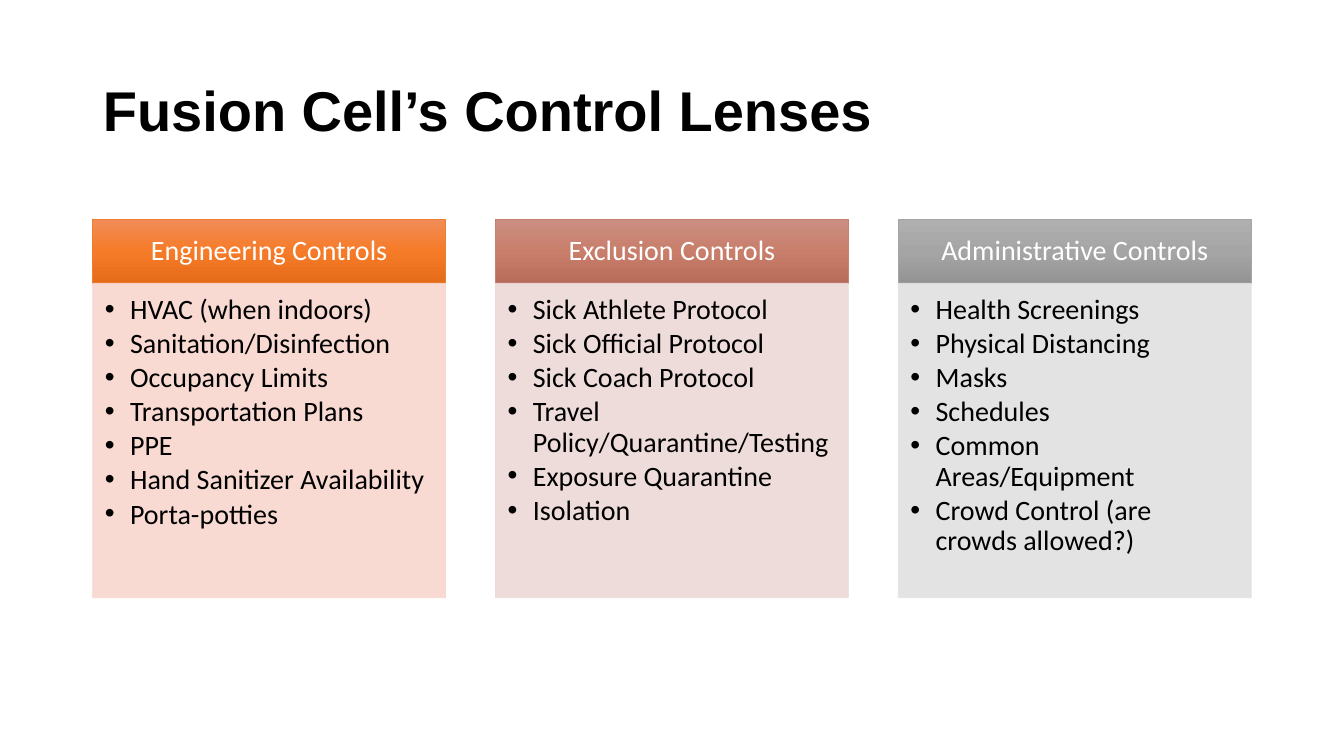
from copy import deepcopy

from lxml import etree
from pptx import Presentation
from pptx import util as u
from pptx.dml.color import RGBColor
from pptx.enum import shapes, text
from pptx.oxml.ns import qn

BLACK = RGBColor(0x00, 0x00, 0x00)
WHITE = RGBColor(0xFF, 0xFF, 0xFF)

# Heading, gradient colours, heading outline, body colour, bullet items
CONTROLS = [
    ("Engineering Controls",
     [RGBColor(0xF1, 0x8C, 0x57), RGBColor(0xF6, 0x7B, 0x28), RGBColor(0xE5, 0x6C, 0x19)],
     RGBColor(0xED, 0x7D, 0x31), RGBColor(0xF8, 0xD7, 0xCE),
     ["HVAC (when indoors)", "Sanitation/Disinfection", "Occupancy Limits",
      "Transportation Plans", "PPE", "Hand Sanitizer Availability", "Porta-potties"]),
    ("Exclusion Controls",
     [RGBColor(0xCB, 0x8F, 0x81), RGBColor(0xC9, 0x7E, 0x6B), RGBColor(0xB7, 0x6D, 0x5B)],
     RGBColor(0xC4, 0x81, 0x70), RGBColor(0xED, 0xD9, 0xD7),
     ["Sick Athlete Protocol", "Sick Official Protocol", "Sick Coach Protocol",
      "Travel Policy/Quarantine/Testing", "Exposure Quarantine", "Isolation"]),
    ("Administrative Controls",
     [RGBColor(0xAF, 0xAF, 0xAF), RGBColor(0xA5, 0xA5, 0xA5), RGBColor(0x93, 0x93, 0x93)],
     RGBColor(0xA5, 0xA5, 0xA5), RGBColor(0xE1, 0xE1, 0xE1),
     ["Health Screenings", "Physical Distancing", "Masks", "Schedules",
      "Common Areas/Equipment", "Crowd Control (are crowds allowed?)"]),
]

LEFT, TOP, TOTAL_WIDTH = 0.92, 2.18, 11.49
COLUMN_WIDTH, HEADING_HEIGHT, BODY_HEIGHT = 3.5, 0.63, 3.12
COLUMN_STEP = (TOTAL_WIDTH - COLUMN_WIDTH) / (len(CONTROLS) - 1)


def write(shape, lines, size=20, font="Calibri", color=BLACK, bold=False,
          align=text.PP_ALIGN.LEFT, anchor=text.MSO_ANCHOR.MIDDLE,
          insets=(0.1, 0.05, 0.1, 0.05), bullet=False):
    frame = shape.text_frame
    frame.word_wrap = True
    frame.auto_size = text.MSO_AUTO_SIZE.NONE
    frame.vertical_anchor = anchor
    (frame.margin_left, frame.margin_top,
     frame.margin_right, frame.margin_bottom) = map(u.Inches, insets)
    frame.text = "\n".join(lines)
    for paragraph in frame.paragraphs:
        paragraph.alignment = align
        paragraph.line_spacing = 0.9
        if bullet:
            paragraph.space_after = u.Pt(2.75)
            properties = paragraph._p.get_or_add_pPr()
            properties.set("marL", str(u.Inches(0.25)))
            properties.set("indent", str(-u.Inches(0.25)))
            etree.SubElement(properties, qn("a:buFont")).set("typeface", "Arial")
            etree.SubElement(properties, qn("a:buChar")).set("char", "•")
        paragraph.font.size = u.Pt(size)
        paragraph.font.name = font
        paragraph.font.bold = bold
        paragraph.font.color.rgb = color


def add_box(slide, left, top, height, outline):
    box = slide.shapes.add_shape(
        shapes.MSO_SHAPE.RECTANGLE, u.Inches(left), u.Inches(top),
        u.Inches(COLUMN_WIDTH), u.Inches(height))
    box.shadow.inherit = False
    box.line.color.rgb = outline
    box.line.width = u.Pt(0.5)
    return box


presentation = Presentation()
presentation.slide_width = u.Inches(13.33)
presentation.slide_height = u.Inches(7.5)
slide = presentation.slides.add_slide(presentation.slide_layouts[5])

# Title
title = slide.shapes.title
title.left, title.top = u.Inches(0.92), u.Inches(0.4)
title.width, title.height = u.Inches(11.5), u.Inches(1.45)
write(title, ["Fusion Cell’s Control Lenses"], size=40, font="Arial", bold=True)

for column, (name, gradient, outline, body_color, items) in enumerate(CONTROLS):
    left = LEFT + column * COLUMN_STEP

    # Heading with a three-stop gradient running downwards
    heading = add_box(slide, left, TOP, HEADING_HEIGHT, outline)
    heading.fill.gradient()
    heading.fill.gradient_angle = 270
    stop_list = heading._element.spPr.find(".//" + qn("a:gsLst"))
    stop_list.append(deepcopy(stop_list[0]))
    for index, (stop, color) in enumerate(zip(heading.fill.gradient_stops, gradient)):
        stop.position = index / 2
        stop.color.rgb = color
    write(heading, [name], color=WHITE, align=text.PP_ALIGN.CENTER,
          insets=(0.16, 0.09, 0.16, 0.09))

    # Body with a slightly transparent fill and outline
    body = add_box(slide, left, TOP + HEADING_HEIGHT, BODY_HEIGHT, body_color)
    body.fill.solid()
    body.fill.fore_color.rgb = body_color
    for color in body._element.spPr.iter(qn("a:srgbClr")):
        etree.SubElement(color, qn("a:alpha")).set("val", "90000")
    write(body, items, anchor=text.MSO_ANCHOR.TOP,
          insets=(0.12, 0.12, 0.16, 0.17), bullet=True)

presentation.save("out.pptx")
